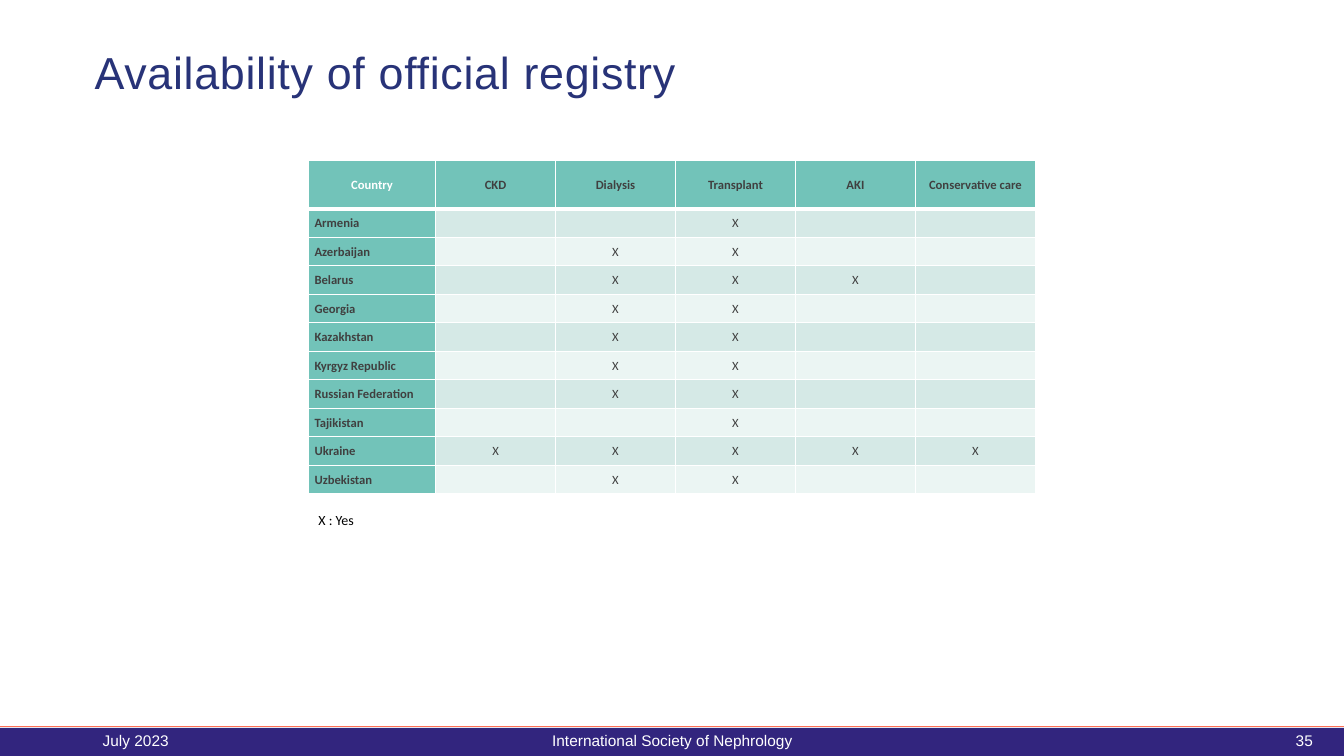
from lxml.etree import SubElement
from pptx import Presentation
from pptx.dml.color import RGBColor
from pptx.enum.shapes import MSO_CONNECTOR, MSO_SHAPE
from pptx.enum.text import MSO_ANCHOR as Anchor, PP_ALIGN as Align
from pptx.oxml.ns import qn
from pptx.util import Inches, Pt

WHITE = RGBColor(0xFF, 0xFF, 0xFF)
BLACK = RGBColor(0, 0, 0)
NAVY = RGBColor(0x28, 0x33, 0x78)
INDIGO = RGBColor(0x32, 0x25, 0x7E)
CORAL = RGBColor(0xFE, 0x70, 0x55)
TEAL = RGBColor(0x72, 0xC3, 0xB9)
BANDS = [RGBColor(0xD5, 0xE9, 0xE6), RGBColor(0xEB, 0xF5, 0xF3)]
GRAY = RGBColor(0x40, 0x40, 0x40)

REGISTRIES = ["CKD", "Dialysis", "Transplant", "AKI", "Conservative care"]
COUNTRIES = {
    "Armenia": ["Transplant"],
    "Azerbaijan": ["Dialysis", "Transplant"],
    "Belarus": ["Dialysis", "Transplant", "AKI"],
    "Georgia": ["Dialysis", "Transplant"],
    "Kazakhstan": ["Dialysis", "Transplant"],
    "Kyrgyz Republic": ["Dialysis", "Transplant"],
    "Russian Federation": ["Dialysis", "Transplant"],
    "Tajikistan": ["Transplant"],
    "Ukraine": REGISTRIES,
    "Uzbekistan": ["Dialysis", "Transplant"],
}


def write_text(frame, text, size, color, font="Arial", bold=False,
               align=Align.LEFT, line_spacing=None, tracking=None):
    paragraph = frame.paragraphs[0]
    paragraph.alignment = align
    if line_spacing:
        paragraph.line_spacing = line_spacing
    if not text:
        # An empty cell keeps the small size so its row stays low
        SubElement(paragraph._p, qn("a:endParaRPr"), sz=str(size * 100))
        return
    run = paragraph.add_run()
    run.text = text
    run.font.size = Pt(size)
    run.font.name = font
    run.font.bold = bold
    run.font.color.rgb = color
    if tracking:
        run.font._element.set("spc", str(int(tracking * 100)))


def add_text_box(slide, text, left, top, width, height, size, color,
                 anchor=Anchor.MIDDLE, **text_format):
    box = slide.shapes.add_textbox(Inches(left), Inches(top),
                                   Inches(width), Inches(height))
    box.text_frame.word_wrap = True
    box.text_frame.vertical_anchor = anchor
    write_text(box.text_frame, text, size, color, **text_format)


def set_borders(cell, **widths):
    properties = cell._tc.get_or_add_tcPr()
    for side in "LRTB":
        line = SubElement(properties, qn(f"a:ln{side}"),
                          w=str(Pt(widths.get(side, 1))))
        fill = SubElement(line, qn("a:solidFill"))
        SubElement(fill, qn("a:srgbClr"), val=str(WHITE))


def fill_cell(cell, text, fill, color=GRAY, bold=False, align=Align.CENTER,
              **border_widths):
    cell.margin_left = cell.margin_right = Inches(0.06)
    cell.margin_top = cell.margin_bottom = 0
    cell.vertical_anchor = Anchor.MIDDLE
    set_borders(cell, **border_widths)
    cell.fill.solid()
    cell.fill.fore_color.rgb = fill
    write_text(cell.text_frame, text, 9, color, font="Calibri", bold=bold,
               align=align, line_spacing=1.07)


def add_registry_table(slide):
    header_height, total_height = 0.48, 3.31
    table = slide.shapes.add_table(
        len(COUNTRIES) + 1, len(REGISTRIES) + 1, Inches(3.06), Inches(1.59),
        Inches(7.21), Inches(total_height)).table
    table.first_row = table.horz_banding = False

    for index, column in enumerate(table.columns):
        column.width = Inches(1.19 if index else 1.26)
    row_height = (total_height - header_height) / len(COUNTRIES)
    for index, row in enumerate(table.rows):
        row.height = Inches(row_height if index else header_height)

    # Header row
    for index, heading in enumerate(["Country"] + REGISTRIES):
        fill_cell(table.cell(0, index), heading, TEAL, bold=True, B=3,
                  color=GRAY if index else WHITE)

    # One row per country
    for row, (country, available) in enumerate(COUNTRIES.items(), 1):
        top = 3 if row == 1 else 1
        fill_cell(table.cell(row, 0), country, TEAL, bold=True,
                  align=Align.LEFT, T=top)
        for column, registry in enumerate(REGISTRIES, 1):
            mark = "X" if registry in available else ""
            fill_cell(table.cell(row, column), mark, BANDS[(row - 1) % 2],
                      T=top)


def add_footer(slide):
    bar = slide.shapes.add_shape(MSO_SHAPE.RECTANGLE, 0, Inches(7.22),
                                 Inches(13.33), Inches(0.28))
    bar.shadow.inherit = False
    bar.fill.solid()
    bar.fill.fore_color.rgb = INDIGO
    bar.line.fill.background()

    rule = slide.shapes.add_connector(MSO_CONNECTOR.STRAIGHT, 0, Inches(7.21),
                                      Inches(13.33), Inches(7.21))
    rule.line.color.rgb = CORAL
    rule.line.width = Pt(0.75)
    SubElement(rule._element.spPr, qn("a:effectLst"))

    for text, left, width, align in [
            ("July 2023", 0.92, 3, Align.LEFT),
            ("International Society of Nephrology", 4.42, 4.5, Align.CENTER),
            ("35", 9.42, 3.7, Align.RIGHT)]:
        add_text_box(slide, text, left, 7.15, width, 0.4, 11, WHITE,
                     align=align)


def main():
    presentation = Presentation()
    presentation.slide_width = Inches(13.33)
    presentation.slide_height = Inches(7.5)
    slide = presentation.slides.add_slide(presentation.slide_layouts[6])

    add_footer(slide)
    add_registry_table(slide)
    # Legend and title
    add_text_box(slide, "X : Yes", 3.06, 5.03, 0.75, 0.27, 10, BLACK,
                 anchor=Anchor.TOP, font="Calibri")
    add_text_box(slide, "Availability of official registry",
                 0.84, 0.39, 9.26, 0.71, 32, NAVY,
                 line_spacing=0.9, tracking=0.5)

    presentation.save("out.pptx")


if __name__ == "__main__":
    main()
